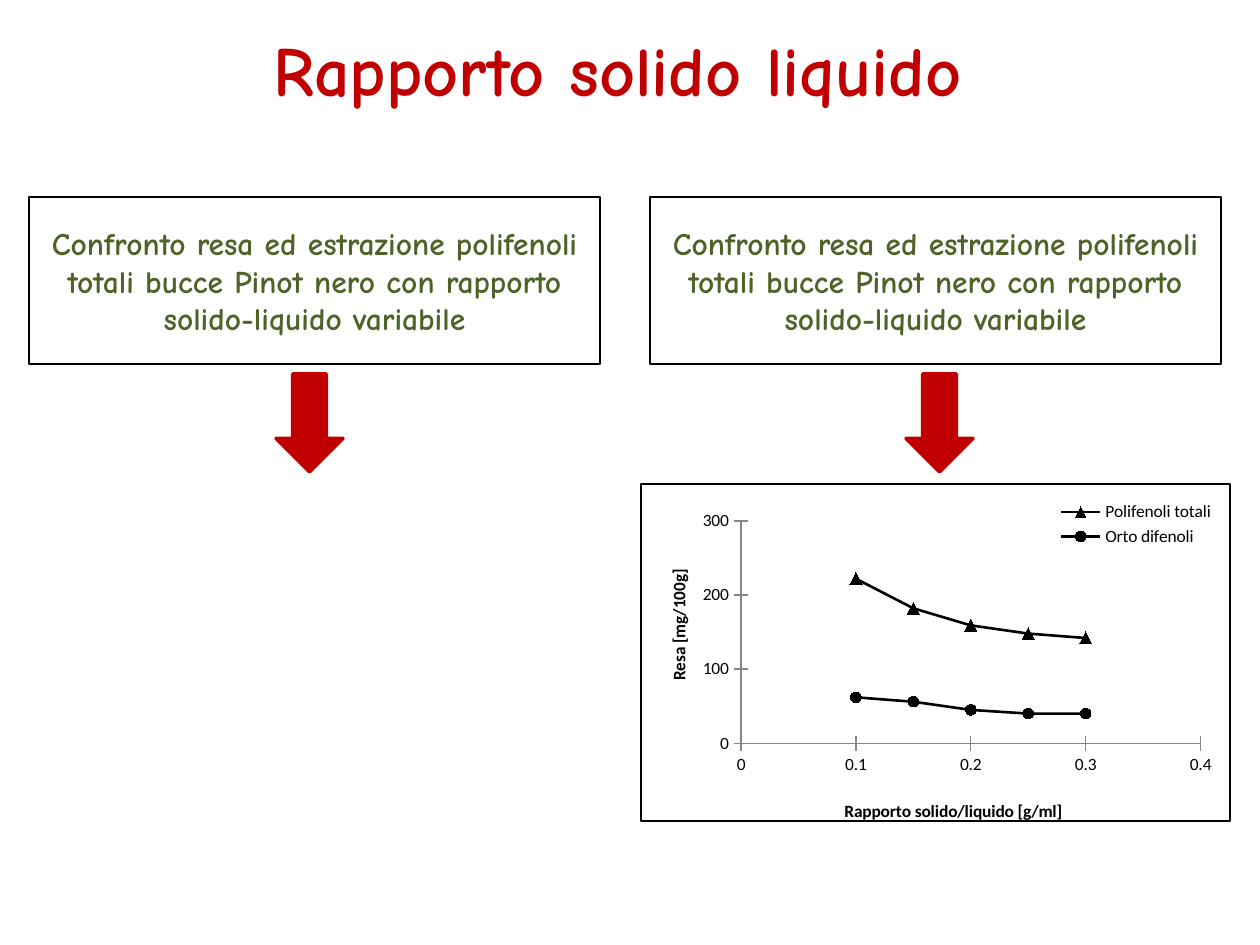
from lxml.etree import SubElement, fromstring
from pptx import Presentation
from pptx.chart.data import XyChartData
from pptx.dml.color import RGBColor
from pptx.enum.chart import XL_CHART_TYPE, XL_LEGEND_POSITION, XL_MARKER_STYLE, XL_TICK_MARK
from pptx.enum.shapes import MSO_SHAPE
from pptx.enum.text import MSO_ANCHOR, PP_ALIGN
from pptx.oxml.ns import nsdecls, qn
from pptx.util import Pt

RED = RGBColor(0xC0, 0x00, 0x00)
GREEN = RGBColor(0x4F, 0x62, 0x28)
BLACK = RGBColor(0x00, 0x00, 0x00)
WHITE = RGBColor(0xFF, 0xFF, 0xFF)
GREY = RGBColor(0x86, 0x86, 0x86)
HAND_FONT = "Comic Neue"

HEADING = "Rapporto solido liquido "
COMPARISON = ("Confronto resa ed estrazione polifenoli totali bucce Pinot nero "
              "con rapporto solido-liquido variabile")
BOX_LEFTS = (29, 650)
ARROW_LEFTS = (276, 906)
RATIOS = (0.1, 0.15, 0.2, 0.25, 0.3)
YIELDS = [
    ("Polifenoli totali", (222, 182, 159, 148, 142), XL_MARKER_STYLE.TRIANGLE, 7),
    ("Orto difenoli", (62, 56, 45, 40, 40), XL_MARKER_STYLE.CIRCLE, 6),
]
RATIO_AXIS = {"title": "Rapporto solido/liquido [g/ml]", "at": (0.34, 0.93),
              "scale": {"minimum_scale": 0, "maximum_scale": 0.4, "major_unit": 0.1}}
YIELD_AXIS = {"title": "Resa [mg/100g]", "at": (0.04, 0.25),
              "scale": {"minimum_scale": 0, "maximum_scale": 300, "major_unit": 100}}


def px(*lengths):
    return [round(length * 914400 / 126) for length in lengths]


def apply(target, formats):
    for name, value in formats.items():
        setattr(target, name, value)


def write(frame, text, size, color):
    apply(frame, {"text": text, "word_wrap": True, "vertical_anchor": MSO_ANCHOR.MIDDLE})
    paragraph = frame.paragraphs[0]
    paragraph.alignment = PP_ALIGN.CENTER
    apply(paragraph.font, {"name": HAND_FONT, "size": Pt(size), "bold": True})
    paragraph.font.color.rgb = color


def add_block(slide, preset, place, fill, outline, width):
    block = slide.shapes.add_shape(preset, *px(*place))
    block.shadow.inherit = False
    block.fill.solid()
    block.fill.fore_color.rgb = fill
    block.line.color.rgb = outline
    block.line.width = Pt(width)
    return block


def set_layout(parent, index, place, inner=False):
    for old in parent.findall(qn("c:layout")):
        parent.remove(old)
    layout = fromstring(f"<c:layout {nsdecls('c')}><c:manualLayout/></c:layout>")
    values = [("layoutTarget", "inner")] if inner else []
    values += [("xMode", "edge"), ("yMode", "edge")] + list(zip("xywh", place))
    for tag, value in values:
        SubElement(layout[0], qn(f"c:{tag}")).set("val", str(value))
    parent.insert(index, layout)


def format_axis(axis, content):
    apply(axis, {"has_major_gridlines": False, "major_tick_mark": XL_TICK_MARK.CROSS,
                 "minor_tick_mark": XL_TICK_MARK.NONE, **content["scale"]})
    axis.format.line.color.rgb = GREY
    axis.tick_labels.number_format = "General"
    axis.tick_labels.number_format_is_linked = False
    title = axis.axis_title
    title.text_frame.text = content["title"]
    font = title.text_frame.paragraphs[0].font
    apply(font, {"name": "Calibri", "size": Pt(10), "bold": True})
    font.color.rgb = BLACK
    set_layout(title._element, 1, content["at"])


def add_yield_chart(slide):
    data = XyChartData()
    for name, yields, _, _ in YIELDS:
        series = data.add_series(name)
        for ratio, value in zip(RATIOS, yields):
            series.add_data_point(ratio, value)
    chart = slide.shapes.add_chart(
        XL_CHART_TYPE.XY_SCATTER_LINES, *px(640, 483, 591, 344), data).chart
    apply(chart, {"has_title": False, "has_legend": True})
    apply(chart.font, {"name": "Calibri", "size": Pt(10)})
    chart.font.color.rgb = BLACK
    chart.plots[0].vary_by_categories = False
    for series, (_, _, style, size) in zip(chart.plots[0].series, YIELDS):
        series.smooth = False
        series.format.line.color.rgb = BLACK
        series.format.line.width = Pt(1.5)
        apply(series.marker, {"style": style, "size": size})
        series.marker.format.fill.solid()
        series.marker.format.fill.fore_color.rgb = BLACK
        series.marker.format.line.color.rgb = BLACK
    format_axis(chart.category_axis, RATIO_AXIS)
    format_axis(chart.value_axis, YIELD_AXIS)
    apply(chart.legend, {"position": XL_LEGEND_POSITION.RIGHT, "include_in_layout": False})
    legend = chart.legend._element
    set_layout(legend, 1 if legend.find(qn("c:legendPos")) is not None else 0,
               (0.7, 0.04, 0.28, 0.16))
    space = chart._chartSpace
    body = space.find(qn("c:chart"))
    set_layout(body.find(qn("c:plotArea")), 0, (0.17, 0.11, 0.78, 0.66), inner=True)
    body.addnext(fromstring(
        f'<c:spPr {nsdecls("c", "a")}>'
        f'<a:solidFill><a:srgbClr val="{WHITE}"/></a:solidFill>'
        f'<a:ln w="{Pt(1)}"><a:solidFill><a:srgbClr val="{BLACK}"/></a:solidFill></a:ln>'
        '</c:spPr>'))


def main():
    deck = Presentation()
    deck.slide_width, deck.slide_height = px(1260, 945)
    slide = deck.slides.add_slide(deck.slide_layouts[5])
    heading = slide.shapes.title
    heading.left, heading.top, heading.width, heading.height = px(0, 0, 1260, 137)
    write(heading.text_frame, HEADING, 40, RED)
    add_yield_chart(slide)
    for left in ARROW_LEFTS:
        add_block(slide, MSO_SHAPE.DOWN_ARROW, (left, 374, 67, 98), RED, RED, 2)
    for left in BOX_LEFTS:
        box = add_block(slide, MSO_SHAPE.RECTANGLE, (left, 197, 571, 167), WHITE, BLACK, 1)
        write(box.text_frame, COMPARISON, 18, GREEN)
    deck.save("out.pptx")


if __name__ == "__main__":
    main()
